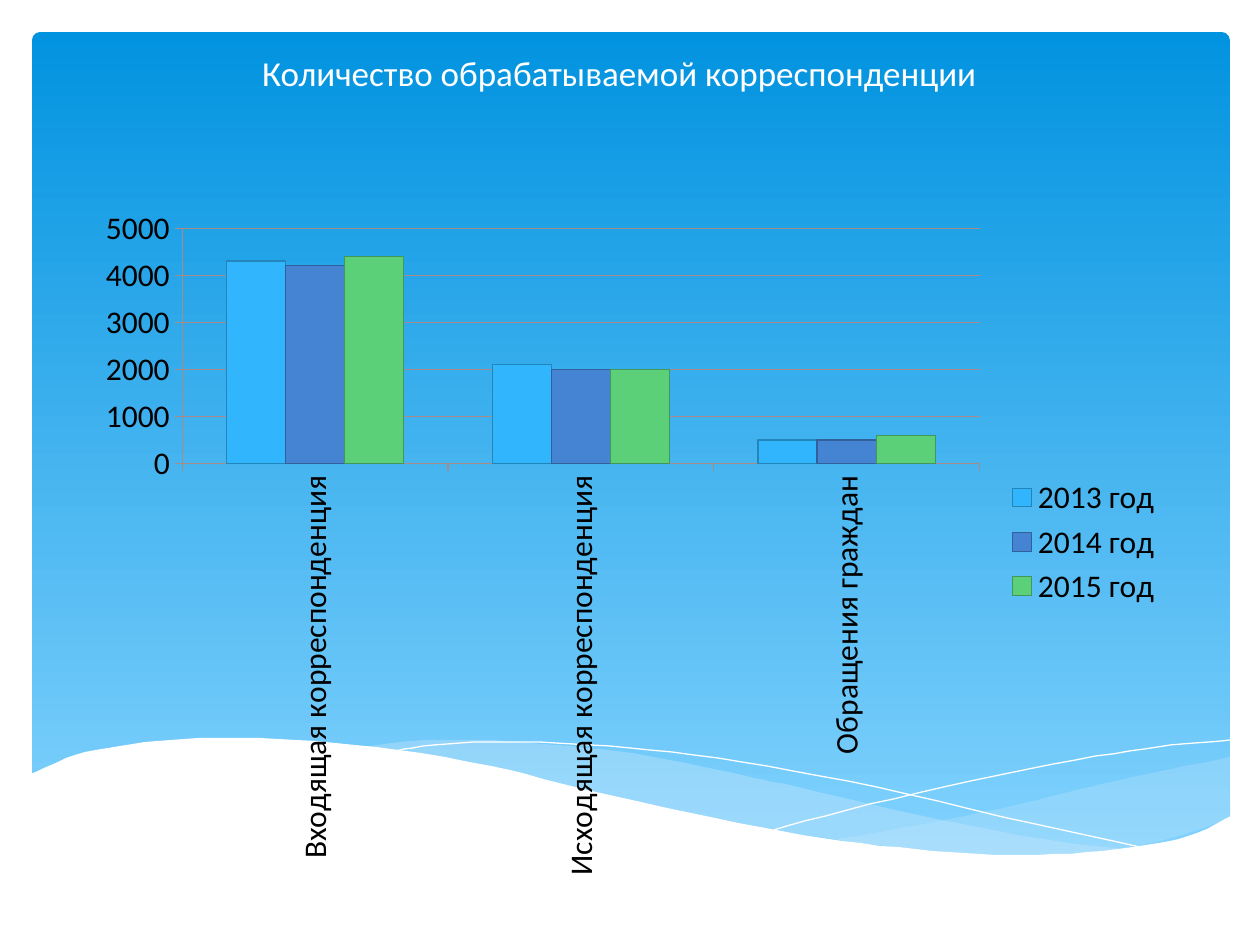
from lxml import etree
from pptx import Presentation, util as u
from pptx.chart.data import CategoryChartData
from pptx.dml.color import RGBColor
from pptx.enum import chart as ch, shapes, text
from pptx.oxml import parse_xml
from pptx.oxml.ns import nsdecls, qn

HEADING = "Количество обрабатываемой корреспонденции"
CATEGORIES = ["Входящая корреспонденция", "Исходящая корреспонденция", "Обращения граждан"]
YEARS = [
    ("2013 год", (4300, 2100, 500), "sky"),
    ("2014 год", (4200, 2000, 500), "blue"),
    ("2015 год", (4400, 2000, 600), "green"),
]
COLORS = {
    "white": "FFFFFF", "black": "000000", "card_top": "0293E0", "card_bottom": "83D3FE",
    "mist": "C6E7FC", "axis": "AA8A86", "sky": "31B6FD", "blue": "4584D3", "green": "5BD078",
    "sky_edge": "2485BA", "blue_edge": "32609B", "green_edge": "42985A",
}
FONT = "Calibri"
CARD = (32, 32, 1198, 832)
HEADING_BOX = (64, 45, 1111, 833)
CHART_BOX = (84, 195, 1091, 694)
PLOT_BOX = (182, 228, 798, 235)

RIGHT_MIST = [
    [(834, 840), (891, 830), (950, 819), (1016, 805), (1086, 788), (1143, 775), (1197, 764), (1230, 757)],
    [(1231, 818), (1198, 830), (1161, 841), (1121, 849), (1075, 854), (1027, 857), (985, 856),
     (924, 852), (872, 845), (834, 840)],
]
LONG_MIST = [
    [(362, 747), (413, 741), (456, 740), (504, 741), (557, 745), (616, 751), (681, 762), (754, 778),
     (794, 786), (891, 809), (978, 827), (1056, 841), (1126, 850)],
    [(1126, 850), (1082, 856), (1032, 857), (975, 855), (912, 849), (840, 840), (758, 828),
     (668, 809), (567, 786), (510, 773), (457, 763), (407, 754), (362, 747)],
]
FALLING_LINE = [[(391, 752), (423, 746), (473, 742), (525, 742), (591, 745), (672, 752), (767, 766),
                 (877, 787), (1003, 817), (1144, 848)]]
RISING_LINE = [[(774, 830), (848, 810), (944, 787), (1054, 764), (1130, 751), (1183, 744), (1230, 740)]]
FRONT_WAVE = [
    [(29, 775), (51, 765), (85, 752), (133, 744), (184, 739), (243, 738), (315, 741), (398, 750),
     (491, 766), (563, 784), (667, 808), (760, 827), (842, 841), (915, 849), (980, 854), (1037, 855),
     (1103, 851), (1159, 843), (1197, 833), (1231, 816)],
    [(1231, 921), (29, 921)],
]
WAVES = [
    (RIGHT_MIST, "mist", 29), (LONG_MIST, "mist", 40),
    (FALLING_LINE, None, 100), (RISING_LINE, None, 100), (FRONT_WAVE, "white", 100),
]
EMU_PER_PX = 914400 / 126
STEPS = 4


def px(*lengths):
    return [u.Emu(round(length * EMU_PER_PX)) for length in lengths]


def rgb(name):
    return RGBColor.from_string(COLORS[name])


def apply(target, formats):
    for name, value in formats.items():
        setattr(target, name, value)


def smooth(knots):
    if len(knots) < 3:
        return knots
    padded = [knots[0], *knots, knots[-1]]
    curve = [knots[0]]
    for a, b, c, d in zip(padded, padded[1:], padded[2:], padded[3:]):
        for step in range(1, STEPS + 1):
            t = step / STEPS
            curve.append(tuple(
                (2 * q + (r - p) * t + (2 * p - 5 * q + 4 * r - s) * t**2
                 + (3 * q - p - 3 * r + s) * t**3) / 2
                for p, q, r, s in zip(a, b, c, d)))
    return curve


def add_wave(slide, edges, fill, opacity):
    points = [point for edge in edges for point in smooth(edge)]
    builder = slide.shapes.build_freeform(*points[0], scale=EMU_PER_PX)
    builder.add_line_segments(points[1:], close=fill is not None)
    wave = builder.convert_to_shape()
    wave.shadow.inherit = False
    if fill is None:
        wave.fill.background()
        wave.line.color.rgb = rgb("white")
        wave.line.width = u.Pt(0)
        return
    wave.fill.solid()
    wave.fill.fore_color.rgb = rgb(fill)
    wave.line.fill.background()
    if opacity < 100:
        color = wave.fill._xPr.find(qn("a:solidFill"))[0]
        etree.SubElement(color, qn("a:alpha"), val=str(opacity * 1000))


def add_card(slide):
    card = slide.shapes.add_shape(shapes.MSO_SHAPE.ROUNDED_RECTANGLE, *px(*CARD))
    card.adjustments[0] = 0.01
    card.shadow.inherit = False
    card.line.fill.background()
    card.fill.gradient()
    card.fill.gradient_angle = 270
    for stop, position, color in zip(card.fill.gradient_stops, (0, 1), ("card_top", "card_bottom")):
        stop.position = position
        stop.color.rgb = rgb(color)


def place_heading(slide):
    heading = slide.shapes.title
    apply(heading, dict(zip(("left", "top", "width", "height"), px(*HEADING_BOX))))
    slide.shapes._spTree.append(heading._element)
    frame = heading.text_frame
    frame.text = HEADING
    apply(frame, {"word_wrap": True, "auto_size": text.MSO_AUTO_SIZE.NONE,
                  "vertical_anchor": text.MSO_ANCHOR.TOP})
    paragraph = frame.paragraphs[0]
    apply(paragraph, {"alignment": text.PP_ALIGN.CENTER, "space_before": u.Pt(4)})
    apply(paragraph.runs[0].font, {"name": FONT, "size": u.Pt(20)})
    paragraph.runs[0].font.color.rgb = rgb("white")


def add_counts_chart(slide):
    counts = CategoryChartData()
    counts.categories = CATEGORIES
    for year, values, _ in YEARS:
        counts.add_series(year, values)
    chart = slide.shapes.add_chart(
        ch.XL_CHART_TYPE.COLUMN_CLUSTERED, *px(*CHART_BOX), counts).chart
    apply(chart, {"has_title": False, "has_legend": True})
    apply(chart.font, {"name": FONT, "size": u.Pt(18)})
    chart.font.color.rgb = rgb("black")
    apply(chart.legend, {"position": ch.XL_LEGEND_POSITION.RIGHT, "include_in_layout": False})
    plot = chart.plots[0]
    apply(plot, {"gap_width": 150, "overlap": 0, "vary_by_categories": False})
    for series, (_, _, color) in zip(plot.series, YEARS):
        series.format.fill.solid()
        series.format.fill.fore_color.rgb = rgb(color)
        series.format.line.color.rgb = rgb(color + "_edge")
        series.format.line.width = u.Pt(0.75)
    apply(chart.value_axis, {"minimum_scale": 0, "maximum_scale": 5000, "major_unit": 1000,
                             "has_major_gridlines": True})
    for axis in (chart.category_axis, chart.value_axis):
        axis.major_tick_mark = ch.XL_TICK_MARK.OUTSIDE
        apply(axis.tick_labels.font, {"name": FONT, "size": u.Pt(18)})
    for part in (chart.category_axis, chart.value_axis, chart.value_axis.major_gridlines):
        part.format.line.color.rgb = rgb("axis")
        part.format.line.width = u.Pt(0.75)
    label_body = chart.category_axis._element.find(qn("c:txPr")).find(qn("a:bodyPr"))
    apply_rotation = {"rot": "-5400000", "vert": "horz"}
    for name, value in apply_rotation.items():
        label_body.set(name, value)

    left, top, width, height = CHART_BOX
    x, y, w, h = PLOT_BOX
    shares = {"x": (x - left) / width, "y": (y - top) / height, "w": w / width, "h": h / height}
    modes = "".join(f'<c:{name}Mode val="edge"/>' for name in "xy")
    sizes = "".join(f'<c:{name} val="{share:.3f}"/>' for name, share in shares.items())
    area = chart._chartSpace.chart.plotArea
    for layout in area.findall(qn("c:layout")):
        area.remove(layout)
    area.insert(0, parse_xml(
        f'<c:layout {nsdecls("c")}><c:manualLayout><c:layoutTarget val="inner"/>'
        f'{modes}{sizes}</c:manualLayout></c:layout>'))


def main():
    deck = Presentation()
    deck.slide_width, deck.slide_height = px(1260, 945)
    slide = deck.slides.add_slide(deck.slide_layouts[5])
    add_card(slide)
    for wave in WAVES:
        add_wave(slide, *wave)
    place_heading(slide)
    add_counts_chart(slide)
    deck.save("out.pptx")


if __name__ == "__main__":
    main()
